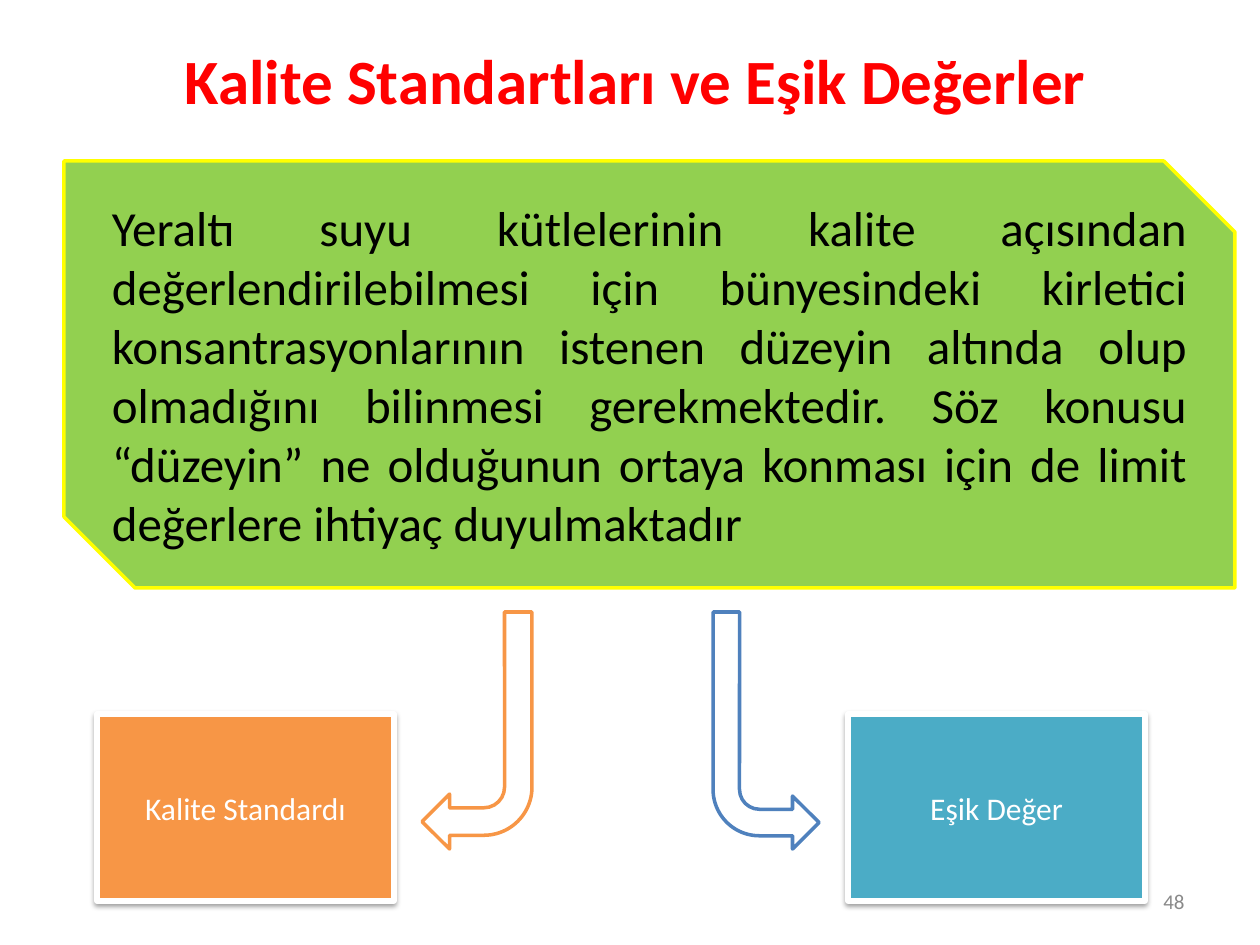
from lxml import etree
from pptx import Presentation
from pptx import util as u
from pptx.dml.color import RGBColor
from pptx.enum import shapes, text
from pptx.oxml.ns import qn

PX = u.Inches(1) / 126
COLORS = {
    "red": "FF0000", "green": "92D050", "yellow": "FFFF00", "orange": "F79646",
    "blue": "4F81BD", "teal": "4BACC6", "white": "FFFFFF", "black": "000000",
    "grey": "898989",
}


def add_block(kind, box, fill, line, width):
    block = slide.shapes.add_shape(kind, *(u.Emu(round(n * PX)) for n in box))
    block.shadow.inherit = False
    block.fill.solid()
    block.fill.fore_color.rgb = RGBColor.from_string(COLORS[fill])
    block.line.color.rgb = RGBColor.from_string(COLORS[line])
    block.line.width = u.Pt(width)
    return block


def write(shape, words, size, color, align, bold=False):
    frame = shape.text_frame
    frame.word_wrap = True
    frame.vertical_anchor = text.MSO_ANCHOR.MIDDLE
    paragraph = frame.paragraphs[0]
    paragraph.alignment = align
    run = paragraph.add_run()
    run.text = words
    run.font.name = "Calibri"
    run.font.size = u.Pt(size)
    run.font.bold = bold
    run.font.color.rgb = RGBColor.from_string(COLORS[color])


prs = Presentation()
prs.slide_width, prs.slide_height = u.Inches(10), u.Inches(7.5)
slide = prs.slides.add_slide(prs.slide_layouts[5])

# Title
title = slide.shapes.title
title.left, title.top, title.width, title.height = (
    u.Emu(round(n * PX)) for n in (74, 0, 1123, 158))
write(title, "Kalite Standartları ve Eşik Değerler", 36, "red",
      text.PP_ALIGN.CENTER, True)

# Slide number
number = slide.shapes.add_textbox(
    *(u.Emu(round(n * PX)) for n in (903, 876, 294, 50)))
write(number, "48", 12, "grey", text.PP_ALIGN.RIGHT)

# Explanation
explanation = add_block(shapes.MSO_SHAPE.SNIP_2_DIAG_RECTANGLE,
                        (64, 161, 1171, 427), "green", "yellow", 2)
write(explanation,
      "Yeraltı suyu kütlelerinin kalite açısından değerlendirilebilmesi için "
      "bünyesindeki kirletici konsantrasyonlarının istenen düzeyin altında olup "
      "olmadığını bilinmesi gerekmektedir. Söz konusu “düzeyin” ne olduğunun "
      "ortaya konması için de limit değerlere ihtiyaç duyulmaktadır",
      28, "black", text.PP_ALIGN.JUSTIFY)

# Arrows down to the two limit values
for left, width, color, mirrored in ((422, 110, "orange", False),
                                     (713, 106, "blue", True)):
    arrow = add_block(shapes.MSO_SHAPE.BENT_ARROW, (left, 612, width, 237),
                      "white", color, 2)
    arrow.rotation = 180
    if mirrored:
        arrow._element.spPr.find(qn("a:xfrm")).set("flipH", "1")

# Limit values, each with a soft shadow below
for left, words, color in ((97, "Kalite Standardı", "orange"),
                           (848, "Eşik Değer", "teal")):
    limit = add_block(shapes.MSO_SHAPE.RECTANGLE, (left, 714, 297, 187),
                      color, "white", 3)
    write(limit, words, 18, "white", text.PP_ALIGN.CENTER)
    effects = limit._element.spPr.find(qn("a:effectLst"))
    shadow = etree.SubElement(
        effects, qn("a:outerShdw"), blurRad=str(u.Pt(3.1)), dist=str(u.Pt(1.6)),
        dir="5400000", rotWithShape="0")
    tint = etree.SubElement(shadow, qn("a:srgbClr"), val=COLORS["black"])
    etree.SubElement(tint, qn("a:alpha"), val="38000")

prs.save("out.pptx")
